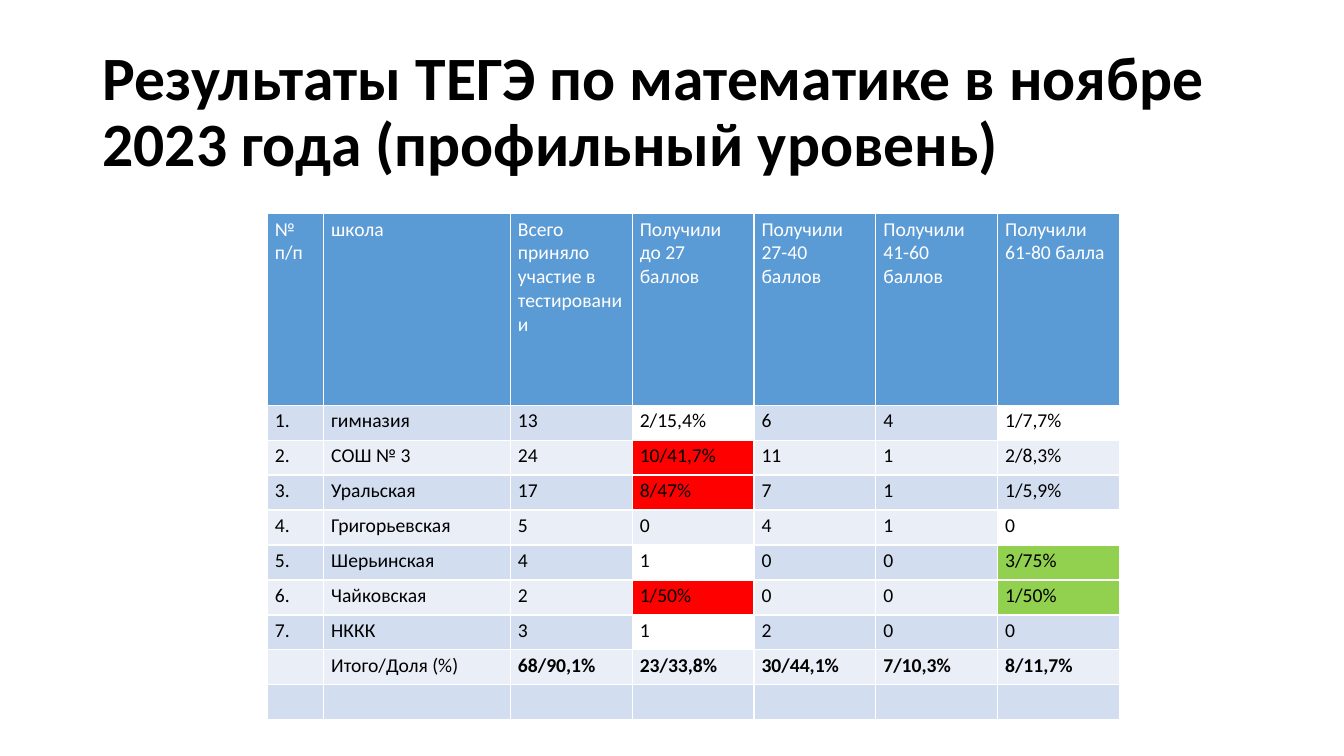
from lxml.etree import SubElement
from pptx import Presentation
from pptx.dml.color import RGBColor
from pptx.enum.text import MSO_ANCHOR as ANCHOR, MSO_AUTO_SIZE as AUTOSIZE, PP_ALIGN as ALIGN
from pptx.oxml.ns import qn
from pptx.util import Pt

BLACK = RGBColor(0x00, 0x00, 0x00)
WHITE = RGBColor(0xFF, 0xFF, 0xFF)
BLUE = RGBColor(0x5B, 0x9B, 0xD5)
BAND_DARK = RGBColor(0xD2, 0xDE, 0xEF)
BAND_LIGHT = RGBColor(0xEA, 0xEF, 0xF7)
RED = RGBColor(0xFF, 0x00, 0x00)
GREEN = RGBColor(0x92, 0xD0, 0x50)

ROWS = [
    ["№ п/п", "школа", "Всего приняло участие в тестировании", "Получили до 27 баллов",
     "Получили 27-40 баллов", "Получили 41-60 баллов", "Получили 61-80 балла"],
    ["1.", "гимназия", "13", "2/15,4%", "6", "4", "1/7,7%"],
    ["2.", "СОШ № 3", "24", "10/41,7%", "11", "1", "2/8,3%"],
    ["3.", "Уральская", "17", "8/47%", "7", "1", "1/5,9%"],
    ["4.", "Григорьевская", "5", "0", "4", "1", "0"],
    ["5.", "Шерьинская", "4", "1", "0", "0", "3/75%"],
    ["6.", "Чайковская", "2", "1/50%", "0", "0", "1/50%"],
    ["7.", "НККК", "3", "1", "2", "0", "0"],
    ["", "Итого/Доля (%)", "68/90,1%", "23/33,8%", "30/44,1%", "7/10,3%", "8/11,7%"],
    [""] * 7,
]
TOTAL_ROW = 8
MARKS = {(2, 3): RED, (3, 3): RED, (6, 3): RED, (5, 6): GREEN, (6, 6): GREEN}
UNFILLED = {(1, 3), (1, 6), (4, 6), (5, 3), (7, 3)}
COL_WIDTHS = [40.2, 133.4] + [87] * 5
ROW_HEIGHTS = [136.8] + [25] * 9


def write(p, text, size=14, color=BLACK, bold=False):
    if not text:
        SubElement(p._p, qn("a:endParaRPr"), sz=str(size * 100))
        return
    r = p.add_run()
    r.text = text
    r.font.name = "Calibri"
    r.font.size = Pt(size)
    r.font.bold = bold
    r.font.color.rgb = color


prs = Presentation()
prs.slide_width, prs.slide_height = Pt(960), Pt(540)
s = prs.slides.add_slide(prs.slide_layouts[5])

title = s.shapes.title
title.left, title.top, title.width, title.height = Pt(66), Pt(28.75), Pt(828), Pt(104.4)
tf = title.text_frame
tf.word_wrap = True
tf.auto_size = AUTOSIZE.NONE
tf.vertical_anchor = ANCHOR.MIDDLE
p = tf.paragraphs[0]
p.alignment = ALIGN.LEFT
p.line_spacing = 0.9
write(p, "Результаты ТЕГЭ по математике в ноябре 2023 года (профильный уровень)", size=44, bold=True)

table = s.shapes.add_table(len(ROWS), len(COL_WIDTHS), Pt(191), Pt(152.6),
                           Pt(sum(COL_WIDTHS)), Pt(sum(ROW_HEIGHTS))).table
for col, width in zip(table.columns, COL_WIDTHS):
    col.width = Pt(width)
for row, height in zip(table.rows, ROW_HEIGHTS):
    row.height = Pt(height)

for i, texts in enumerate(ROWS):
    band = BLUE if i == 0 else BAND_DARK if i % 2 else BAND_LIGHT
    for j, text in enumerate(texts):
        cell = table.cell(i, j)
        cell.margin_left = cell.margin_right = Pt(5.4)
        cell.margin_top = cell.margin_bottom = Pt(2.7)
        if (i, j) in UNFILLED:
            cell.fill.background()
        else:
            cell.fill.solid()
            cell.fill.fore_color.rgb = MARKS.get((i, j), band)
        write(cell.text_frame.paragraphs[0], text, color=BLACK if i else WHITE,
              bold=i == TOTAL_ROW and j > 1)

prs.save("out.pptx")
